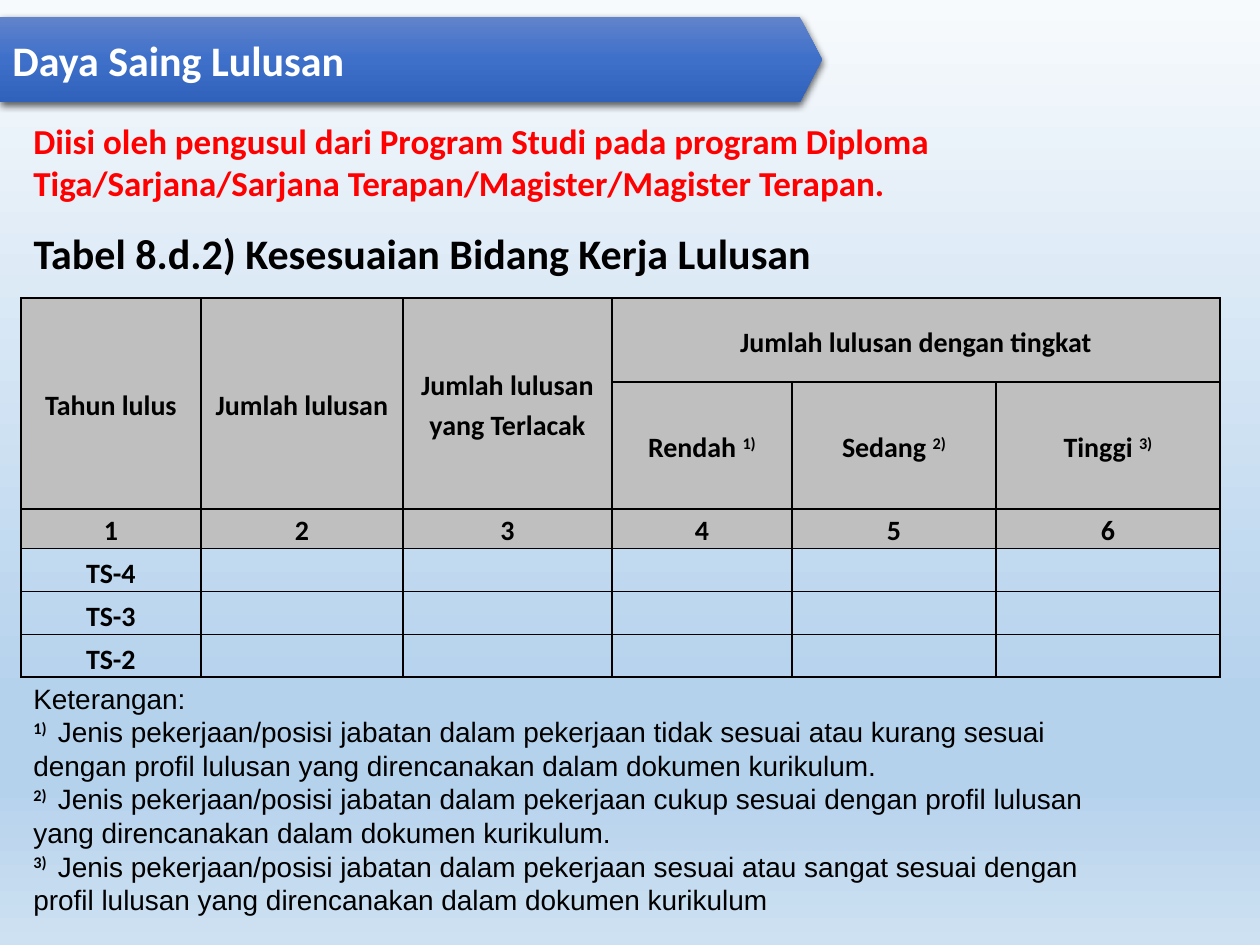
from lxml import etree
from pptx import Presentation
from pptx import util as u
from pptx.dml.color import RGBColor
from pptx.enum import shapes, text
from pptx.oxml.ns import qn

BLACK = RGBColor(0x00, 0x00, 0x00)
WHITE = RGBColor(0xFF, 0xFF, 0xFF)
RED = RGBColor(0xFF, 0x00, 0x00)
GREY = RGBColor(0xBF, 0xBF, 0xBF)
SKY = [(0, RGBColor(0xF7, 0xFA, 0xFD)), (74, RGBColor(0xB5, 0xD2, 0xEC)),
       (83, RGBColor(0xB5, 0xD2, 0xEC)), (100, RGBColor(0xCE, 0xE1, 0xF2))]
BLUE = [(0, RGBColor(0x61, 0x83, 0xCB)), (50, RGBColor(0x3E, 0x70, 0xCA)),
        (100, RGBColor(0x30, 0x62, 0xBB))]
HEAD, BODY = "Calibri", "Arial"
MIDDLE, BOTTOM = text.MSO_ANCHOR.MIDDLE, text.MSO_ANCHOR.BOTTOM


def px(n):
    return u.Emu(round(n * 914400 / 126))


def child(parent, tag, **attrs):
    return etree.SubElement(parent, qn(tag), {k: str(v) for k, v in attrs.items()})


class Deck:
    def __init__(self):
        self.prs = Presentation()
        self.prs.slide_width, self.prs.slide_height = px(1260), px(945)
        self.s = self.prs.slides.add_slide(self.prs.slide_layouts[5])

    def gradient(self, fill, owner, stops):
        """Vertical gradient, top to bottom."""
        fill.gradient()
        fill.gradient_angle = 270
        gs_list = owner.find(".//" + qn("a:gsLst"))
        for gs in list(gs_list):
            gs_list.remove(gs)
        for pos, color in stops:
            gs = child(gs_list, "a:gs", pos=pos * 1000)
            child(gs, "a:srgbClr", val=color)

    def background(self, stops):
        self.gradient(self.s.background.fill, self.s.element, stops)

    def set_text(self, tf, lines, size, font=HEAD, color=BLACK, bold=True,
                 align=text.PP_ALIGN.LEFT, spacing=None):
        """Each line is a string, or a list of strings and (superscript,) tuples."""
        for i, line in enumerate(lines):
            p = tf.paragraphs[0] if i == 0 else tf.add_paragraph()
            p.alignment, p.line_spacing = align, spacing
            f = p.font
            f.name, f.size, f.bold, f.color.rgb = font, u.Pt(size), bold, color
            for part in [line] if isinstance(line, str) else line:
                r = p.add_run()
                if isinstance(part, tuple):
                    r.text = part[0]
                    r.font.name, r.font.bold = HEAD, True
                    r.font._element.set("baseline", "30000")
                else:
                    r.text = part

    def title(self, box, line):
        sp = self.s.shapes.title
        sp.left, sp.top, sp.width, sp.height = map(px, box)
        tf = sp.text_frame
        tf.vertical_anchor, tf.word_wrap = MIDDLE, True
        self.set_text(tf, [line], 24, spacing=0.9)

    def banner(self, box, line):
        sp = self.s.shapes.add_shape(shapes.MSO_SHAPE.PENTAGON, *map(px, box))
        sp.adjustments[0] = 0.26
        self.gradient(sp.fill, sp.element, BLUE)
        sp.line.fill.background()
        sp.shadow.inherit = False
        effects = sp.element.spPr.find(qn("a:effectLst"))
        shadow = child(effects, "a:outerShdw", blurRad=u.Pt(4.5), dist=u.Pt(1.5),
                       dir=5400000, algn="ctr", rotWithShape=0)
        child(child(shadow, "a:srgbClr", val=BLACK), "a:alpha", val=63000)
        sp.text_frame.vertical_anchor = MIDDLE
        self.set_text(sp.text_frame, [line], 24, color=WHITE)

    def textbox(self, box, lines, size, **style):
        tf = self.s.shapes.add_textbox(*map(px, box)).text_frame
        tf.word_wrap = True
        tf.auto_size = text.MSO_AUTO_SIZE.SHAPE_TO_FIT_TEXT
        self.set_text(tf, lines, size, **style)

    def cell(self, cell, content, anchor, fill):
        cell.margin_left = cell.margin_right = px(9)
        cell.margin_top = cell.margin_bottom = 0
        cell.vertical_anchor = anchor
        tc_pr = cell._tc.get_or_add_tcPr()
        for side in "LRTB":
            ln = child(tc_pr, "a:ln" + side, w=u.Pt(1))
            child(child(ln, "a:solidFill"), "a:srgbClr", val=BLACK)
        if fill is None:
            cell.fill.background()
        else:
            cell.fill.solid()
            cell.fill.fore_color.rgb = fill
        self.set_text(cell.text_frame, [content], 16,
                      align=text.PP_ALIGN.CENTER, spacing=1.15)

    def table(self, left, top, widths, heights, rows, merges, n_head):
        tbl = self.s.shapes.add_table(len(rows), len(widths), px(left), px(top),
                                      px(sum(widths)), px(sum(heights))).table
        tbl.first_row = tbl.horz_banding = False
        for col, w in zip(tbl.columns, widths):
            col.width = px(w)
        for row, h in zip(tbl.rows, heights):
            row.height = px(h)
        for i, row in enumerate(rows):
            for j, content in enumerate(row):
                self.cell(tbl.cell(i, j), content, MIDDLE if i < 2 else BOTTOM,
                          GREY if i < n_head else None)
        for first, last in merges:
            tbl.cell(*first).merge(tbl.cell(*last))


def main():
    d = Deck()
    d.background(SKY)

    # Headings
    d.title((21, 212, 1200, 87), "Tabel 8.d.2) Kesesuaian Bidang Kerja Lulusan")
    d.banner((0, 17, 822, 85), "Daya Saing Lulusan")

    # Table of graduates by job match
    levels = [[name + " ", (f"{n})",)]
              for n, name in enumerate(("Rendah", "Sedang", "Tinggi"), 1)]
    rows = [["Tahun lulus", "Jumlah lulusan", "Jumlah lulusan yang Terlacak",
             "Jumlah lulusan dengan tingkat", "", ""],
            ["", "", ""] + levels,
            [str(n) for n in range(1, 7)]]
    rows += [[f"TS-{n}"] + [""] * 5 for n in (4, 3, 2)]
    merges = [((0, j), (1, j)) for j in range(3)] + [((0, 3), (0, 5))]
    d.table(21, 298, [180, 202, 209, 180, 204, 224],
            [84, 127, 34] + [43] * 3, rows, merges, n_head=3)

    # Notes on the levels
    d.textbox((21, 675, 1230, 255), [
        "Keterangan:",
        [("1) ",), " Jenis pekerjaan/posisi jabatan dalam pekerjaan tidak sesuai atau kurang sesuai"],
        "dengan profil lulusan yang direncanakan dalam dokumen kurikulum.",
        [("2) ",), " Jenis pekerjaan/posisi jabatan dalam pekerjaan cukup sesuai dengan profil lulusan"],
        "yang direncanakan dalam dokumen kurikulum.",
        [("3) ",), " Jenis pekerjaan/posisi jabatan dalam pekerjaan sesuai atau sangat sesuai dengan"],
        "profil lulusan yang direncanakan dalam dokumen kurikulum",
    ], 16, font=BODY, bold=False)

    # Who fills in the table
    d.textbox((21, 113, 1167, 97), [
        "Diisi oleh pengusul dari Program Studi pada program Diploma "
        "Tiga/Sarjana/Sarjana Terapan/Magister/Magister Terapan."], 20, color=RED)

    d.prs.save("out.pptx")


if __name__ == "__main__":
    main()
